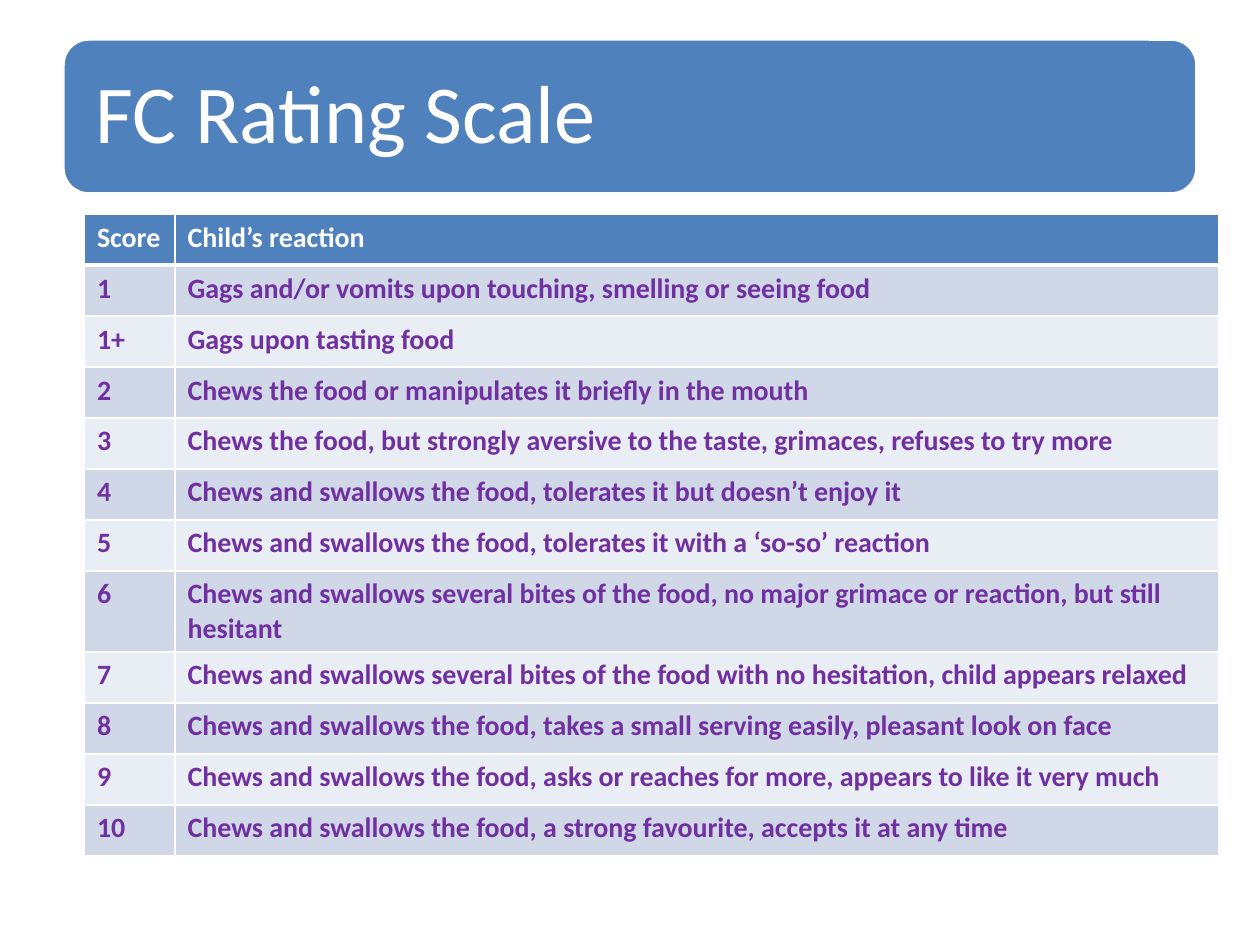
from lxml import etree
from pptx import Presentation
from pptx.dml.color import RGBColor
from pptx.enum.shapes import MSO_SHAPE
from pptx.enum.text import MSO_ANCHOR, PP_ALIGN
from pptx.oxml.ns import qn
from pptx.util import Inches, Pt

ROUNDED = MSO_SHAPE.ROUNDED_RECTANGLE
MIDDLE = MSO_ANCHOR.MIDDLE
LEFT = PP_ALIGN.LEFT

FONT = "Calibri"
COLORS = {
    "blue": "4F81BD",
    "white": "FFFFFF",
    "purple": "7030A0",
    "dark_band": "D0D8E8",
    "light_band": "E9EDF4",
}

HEADER = ("Score", "Child’s reaction")
RATINGS = [
    ("1", "Gags and/or vomits upon touching, smelling or seeing food"),
    ("1+", "Gags upon tasting food"),
    ("2", "Chews the food or manipulates it briefly in the mouth"),
    ("3", "Chews the food, but strongly aversive to the taste, grimaces, refuses to try more"),
    ("4", "Chews and swallows the food, tolerates it but doesn’t enjoy it"),
    ("5", "Chews and swallows the food, tolerates it with a ‘so-so’ reaction"),
    ("6", "Chews and swallows several bites of the food, no major grimace or reaction, "
          "but still hesitant"),
    ("7", "Chews and swallows several bites of the food with no hesitation, child appears relaxed"),
    ("8", "Chews and swallows the food, takes a small serving easily, pleasant look on face"),
    ("9", "Chews and swallows the food, asks or reaches for more, appears to like it very much"),
    ("10", "Chews and swallows the food, a strong favourite, accepts it at any time"),
]
COLUMN_WIDTHS = (0.72, 8.28)
TABLE_HEIGHT = 5.09
TWO_LINE_HEIGHT = 0.64
TWO_LINE_SCORE = "6"


def color(name):
    return RGBColor.from_string(COLORS[name])


def write_text(text_frame, text, size, font_color, bold=False, line_spacing=None):
    paragraph = text_frame.paragraphs[0]
    paragraph.alignment = LEFT
    if line_spacing:
        paragraph.line_spacing = line_spacing
    run = paragraph.add_run()
    run.text = text
    run.font.name = FONT
    run.font.size = Pt(size)
    run.font.bold = bold
    run.font.color.rgb = color(font_color)


def add_title_banner(slide, text):
    banner = slide.shapes.add_shape(ROUNDED, Inches(0.5), Inches(0.31), Inches(9), Inches(1.23))
    banner.shadow.inherit = False
    banner.fill.solid()
    banner.fill.fore_color.rgb = color("blue")
    banner.line.color.rgb = color("white")
    banner.line.width = Pt(2)
    text_frame = banner.text_frame
    text_frame.word_wrap = True
    text_frame.vertical_anchor = MIDDLE
    # The rounded corners already add about 0.06 inch to each inset
    text_frame.margin_left = text_frame.margin_right = Inches(0.2)
    text_frame.margin_top = text_frame.margin_bottom = Inches(0.2)
    write_text(text_frame, text, size=47, font_color="white", line_spacing=0.9)


def set_borders(cell, top=1, bottom=1):
    properties = cell._tc.get_or_add_tcPr()
    for side, width in (("L", 1), ("R", 1), ("T", top), ("B", bottom)):
        line = etree.SubElement(properties, qn(f"a:ln{side}"), w=str(Pt(width)))
        fill = etree.SubElement(line, qn("a:solidFill"))
        etree.SubElement(fill, qn("a:srgbClr"), val=COLORS["white"])


def add_rating_table(slide):
    rows = [HEADER] + RATINGS
    table = slide.shapes.add_table(
        len(rows), len(COLUMN_WIDTHS), Inches(0.67), Inches(1.7),
        Inches(sum(COLUMN_WIDTHS)), Inches(TABLE_HEIGHT)).table
    for column, width in zip(table.columns, COLUMN_WIDTHS):
        column.width = Inches(width)

    row_height = (TABLE_HEIGHT - TWO_LINE_HEIGHT) / (len(rows) - 1)
    for index, texts in enumerate(rows):
        is_header = index == 0
        is_tall = texts[0] == TWO_LINE_SCORE
        table.rows[index].height = Inches(TWO_LINE_HEIGHT if is_tall else row_height)
        band = "blue" if is_header else "dark_band" if index % 2 else "light_band"
        for cell, text in zip(table.rows[index].cells, texts):
            # A thicker rule separates the header from the ratings
            set_borders(cell, top=3 if index == 1 else 1, bottom=3 if is_header else 1)
            cell.fill.solid()
            cell.fill.fore_color.rgb = color(band)
            write_text(cell.text_frame, text, size=16, bold=True,
                       font_color="white" if is_header else "purple")


def main():
    presentation = Presentation()
    presentation.slide_width = Inches(10)
    presentation.slide_height = Inches(7.5)
    slide = presentation.slides.add_slide(presentation.slide_layouts[6])

    add_title_banner(slide, "FC Rating Scale")
    add_rating_table(slide)

    presentation.save("out.pptx")


if __name__ == "__main__":
    main()
